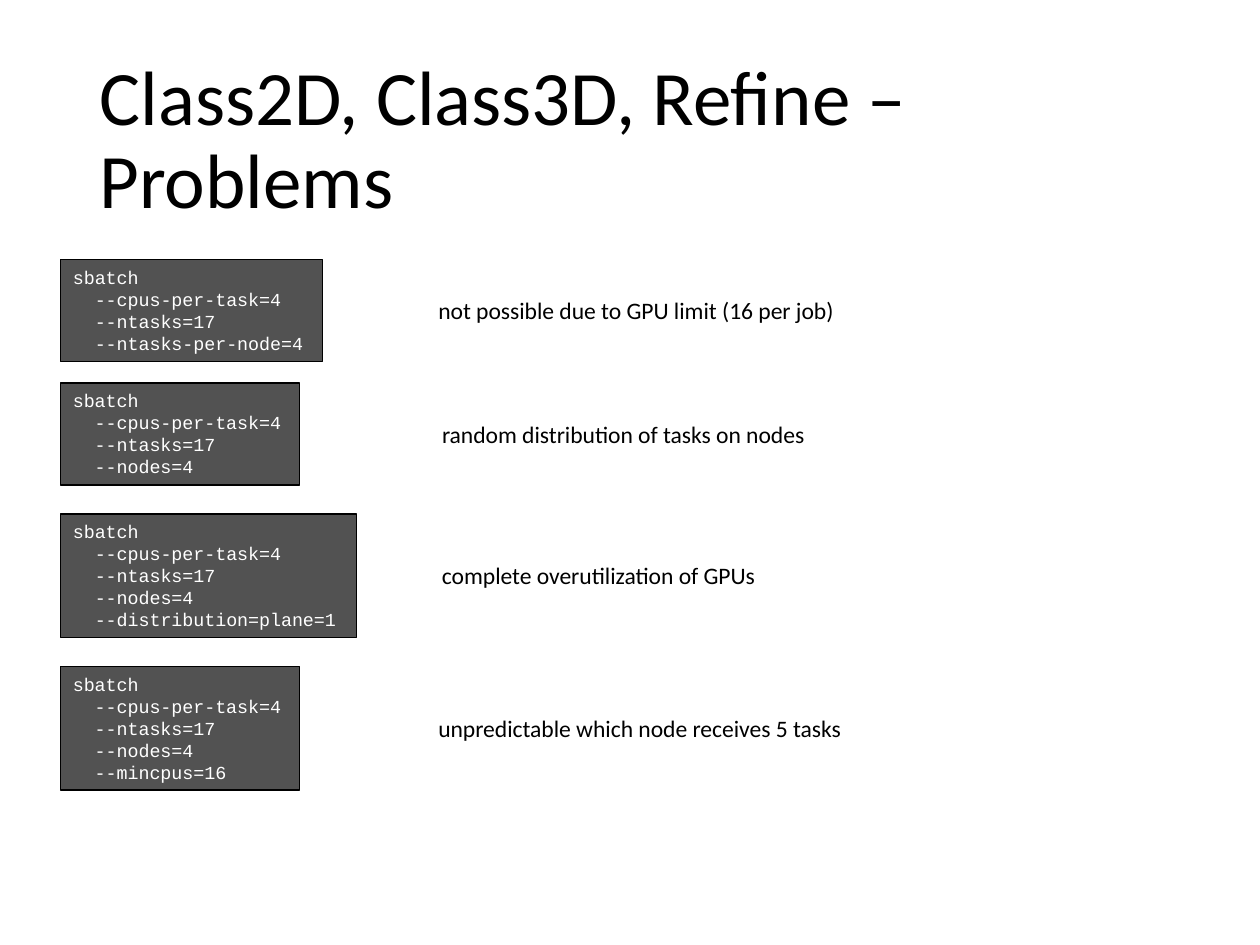
from pptx import Presentation
from pptx.dml.color import RGBColor
from pptx.enum import shapes, text
from pptx.util import Inches, Pt

COLORS = {"text": "000000", "code": "FFFFFF", "box": "525252", "border": "000000"}

# Top of the box, options after the common ones, note left, note width, note
PROBLEMS = [
    (2.06, ["--ntasks-per-node=4"], 3.38, 3.39, "not possible due to GPU limit (16 per job)"),
    (3.04, ["--nodes=4"], 3.41, 3.12, "random distribution of tasks on nodes"),
    (4.08, ["--nodes=4", "--distribution=plane=1"], 3.41, 2.73, "complete overutilization of GPUs"),
    (5.29, ["--nodes=4", "--mincpus=16"], 3.38, 3.45, "unpredictable which node receives 5 tasks"),
]
COMMON_OPTIONS = ["--cpus-per-task=4", "--ntasks=17"]
BOX_LEFT = 0.48
NOTE_HEIGHT = 0.33


class SlideBuilder:
    """Holds the style and the current slide."""

    body_font = "Calibri"
    code_font = "Courier New"

    def __init__(self, slide):
        self.slide = slide

    def color(self, name):
        return RGBColor.from_string(COLORS[name])

    def set_text(self, frame, lines, font, size, color):
        frame.text = "\n".join(lines)
        for paragraph in frame.paragraphs:
            paragraph.alignment = text.PP_ALIGN.LEFT
            paragraph.font.name = font
            paragraph.font.size = Pt(size)
            paragraph.font.color.rgb = self.color(color)

    def fit(self, frame):
        frame.word_wrap = False
        frame.auto_size = text.MSO_AUTO_SIZE.SHAPE_TO_FIT_TEXT

    def title(self, wording, left, top, width, height):
        shape = self.slide.shapes.title
        shape.left, shape.top = Inches(left), Inches(top)
        shape.width, shape.height = Inches(width), Inches(height)
        frame = shape.text_frame
        frame.vertical_anchor = text.MSO_ANCHOR.MIDDLE
        frame.auto_size = text.MSO_AUTO_SIZE.NONE
        self.set_text(frame, [wording], self.body_font, 44, "text")
        frame.paragraphs[0].line_spacing = 0.9

    def code_box(self, lines, left, top):
        """Draw a box sized to its lines and return its height."""
        width = 0.19 + 0.09 * max(map(len, lines))
        height = 0.13 + 0.17 * len(lines)
        shape = self.slide.shapes.add_shape(
            shapes.MSO_SHAPE.RECTANGLE,
            Inches(left), Inches(top), Inches(width), Inches(height))
        shape.shadow.inherit = False
        shape.fill.solid()
        shape.fill.fore_color.rgb = self.color("box")
        shape.line.color.rgb = self.color("border")
        shape.line.width = Pt(0.75)
        frame = shape.text_frame
        frame.vertical_anchor = text.MSO_ANCHOR.TOP
        self.fit(frame)
        self.set_text(frame, lines, self.code_font, 10.5, "code")
        return height

    def note(self, wording, left, top, width):
        shape = self.slide.shapes.add_textbox(
            Inches(left), Inches(top), Inches(width), Inches(NOTE_HEIGHT))
        self.fit(shape.text_frame)
        self.set_text(shape.text_frame, [wording], self.body_font, 13.5, "text")


def main():
    presentation = Presentation()
    presentation.slide_width, presentation.slide_height = Inches(10), Inches(7.5)
    builder = SlideBuilder(presentation.slides.add_slide(presentation.slide_layouts[5]))

    # Title
    builder.title("Class2D, Class3D, Refine – Problems", 0.69, 0.4, 8.62, 1.45)

    # Commands, each with a note centred beside it
    for top, options, note_left, note_width, note in PROBLEMS:
        lines = ["sbatch"] + [f"  {option}" for option in COMMON_OPTIONS + options]
        height = builder.code_box(lines, BOX_LEFT, top)
        builder.note(note, note_left, top + (height - NOTE_HEIGHT) / 2, note_width)

    presentation.save("out.pptx")


if __name__ == "__main__":
    main()
